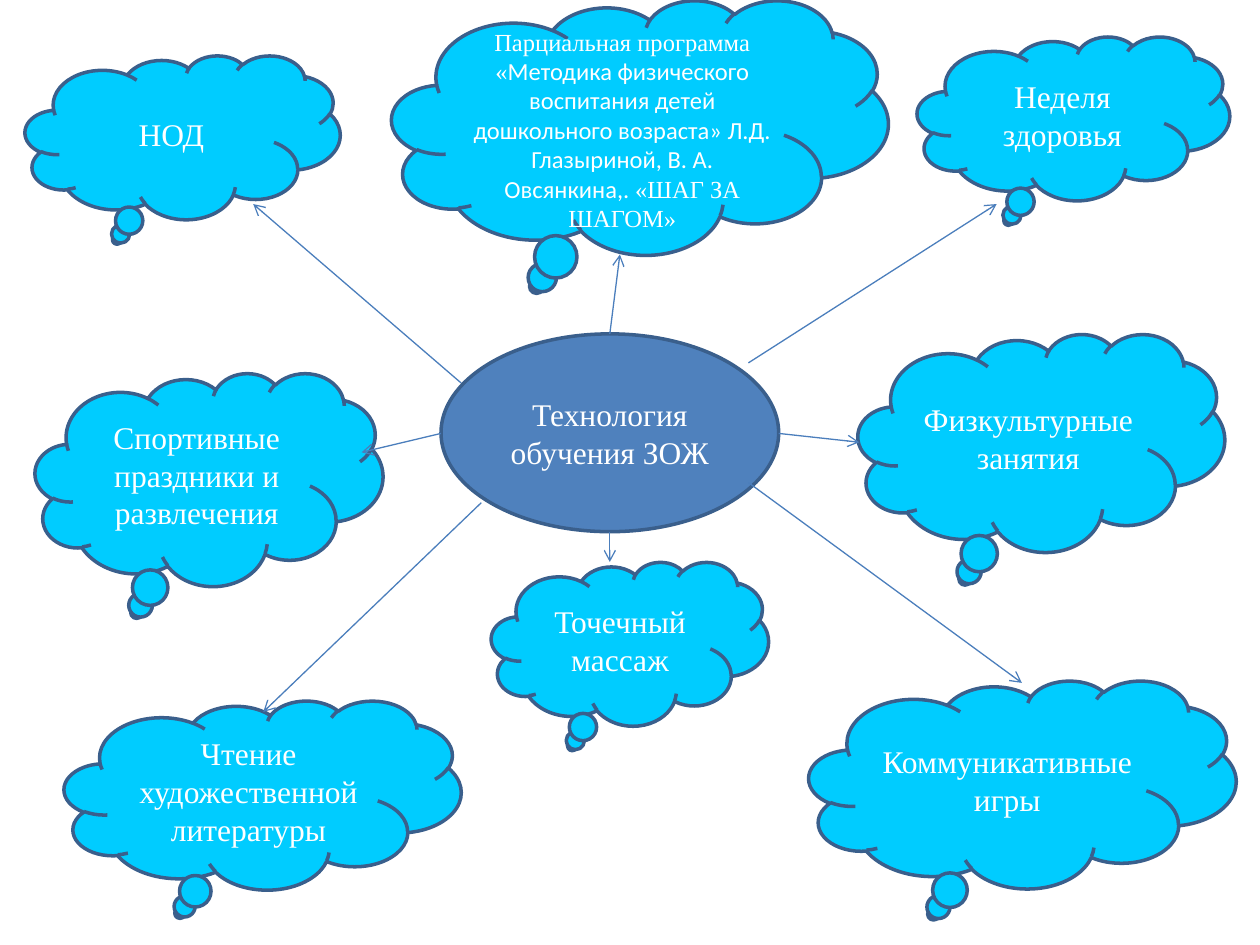
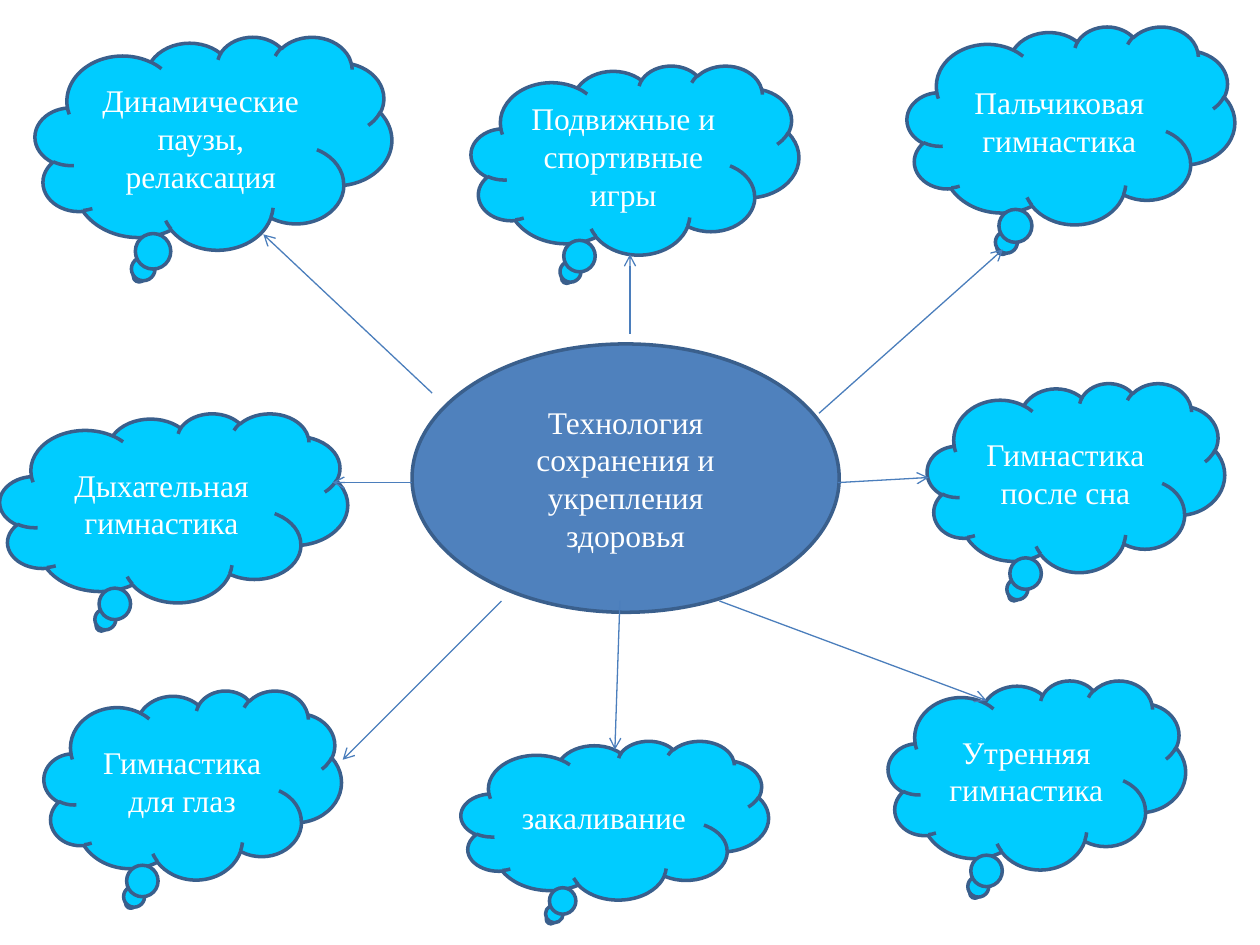
from lxml.etree import SubElement
from pptx import Presentation
from pptx.dml.color import RGBColor
from pptx.enum.shapes import MSO_CONNECTOR, MSO_SHAPE
from pptx.enum.text import MSO_ANCHOR, PP_ALIGN
from pptx.oxml.ns import qn
from pptx.util import Inches, Pt

SERIF, SANS = "Times New Roman", "Calibri"
CLOUD_FILL = RGBColor(0x00, 0xCC, 0xFF)
TOPIC_FILL = RGBColor(0x4F, 0x81, 0xBD)
OUTLINE = RGBColor(0x3A, 0x5F, 0x8C)
ARROW = RGBColor(0x4B, 0x7E, 0xBC)
WHITE = RGBColor(0xFF, 0xFF, 0xFF)

PROGRAMME = [
    ("Парциальная программа «", SERIF),
    ("Методика физического воспитания детей дошкольного возраста» Л.Д. Глазыриной, "
     "В. А. Овсянкина,. ", SANS),
    ("«ШАГ ЗА ШАГОМ»", SERIF),
]

# Inches. Topic: text, box. Cloud: text, box (left, top, width, height), arrow start, arrow end.
MAPS = [
    {
        "topic": ("Технология обучения ЗОЖ", (3.5, 2.65, 2.68, 1.57)),
        "clouds": [
            (PROGRAMME, (3.11, 0, 3.94, 2.02), (4.84, 2.65), (4.92, 2.02)),
            ("Физкультурные занятия", (6.81, 2.65, 2.91, 1.73), (6.18, 3.44), (6.82, 3.51)),
            ("НОД", (0.2, 0.44, 2.5, 1.3), (3.66, 3.04), (2.01, 1.62)),
            ("Коммуникативные игры", (6.42, 5.4, 3.39, 1.65), (5.94, 3.83), (8.11, 5.42)),
            ("Чтение художественной литературы", (0.51, 5.56, 3.15, 1.5),
             (3.82, 3.99), (2.09, 5.65)),
            ("Точечный массаж", (3.9, 4.46, 2.2, 1.3), (4.84, 4.22), (4.84, 4.46)),
            ("Спортивные праздники и развлечения", (0.28, 2.96, 2.76, 1.69),
             (3.5, 3.44), (2.87, 3.59)),
            ("Неделя здоровья", (7.28, 0.29, 2.48, 1.3), (5.94, 2.88), (7.91, 1.62)),
        ],
    },
    {
        "topic": ("Технология сохранения и укрепления здоровья", (3.27, 2.73, 3.39, 2.13)),
        "clouds": [
            ("Динамические паузы, релаксация", (0.28, 0.29, 2.83, 1.69),
             (3.43, 3.12), (2.09, 1.86)),
            ("Подвижные и спортивные игры", (3.74, 0.52, 2.6, 1.5), (5, 2.65), (5, 2.02)),
            ("Пальчиковая гимнастика", (7.2, 0.21, 2.6, 1.57), (6.5, 3.28), (7.96, 1.98)),
            ("Гимнастика после сна", (7.36, 3.04, 2.36, 1.5), (6.65, 3.83), (7.37, 3.79)),
            ("Дыхательная гимнастика", (0, 3.28, 2.76, 1.5), (3.27, 3.83), (2.64, 3.83)),
            ("Утренняя гимнастика", (7.05, 5.4, 2.36, 1.5), (5.71, 4.77), (7.83, 5.56)),
            ("Гимнастика для глаз", (0.35, 5.48, 2.36, 1.5), (3.98, 4.77), (2.72, 6.03)),
            ("закаливание", (3.66, 5.88, 2.44, 1.26), (4.92, 4.77), (4.88, 5.95)),
        ],
    },
]


def add_bubble(page, preset, text, box, fill):
    """Add an outlined shape with centred text: a string, or (text, font) spans set smaller."""
    shape = page.shapes.add_shape(preset, *map(Inches, box))
    shape.shadow.inherit = False
    shape.fill.solid()
    shape.fill.fore_color.rgb = fill
    shape.line.color.rgb = OUTLINE
    shape.line.width = Pt(2)
    frame = shape.text_frame
    frame.word_wrap = True
    frame.vertical_anchor = MSO_ANCHOR.MIDDLE
    para = frame.paragraphs[0]
    para.alignment = PP_ALIGN.CENTER
    para.font.color.rgb = WHITE
    if isinstance(text, str):
        para.text = text
        para.font.name = SERIF
        para.font.size = Pt(18)
    else:
        frame.margin_top = Inches(0.18)
        para.font.size = Pt(14)
        for words, font in text:
            span = para.add_run()
            span.text = words
            span.font.name = font


def add_arrow(page, start, end):
    arrow = page.shapes.add_connector(MSO_CONNECTOR.STRAIGHT, *map(Inches, start + end))
    arrow.line.color.rgb = ARROW
    arrow.line.width = Pt(0.75)
    SubElement(arrow.line._get_or_add_ln(), qn("a:tailEnd"), type="arrow")
    SubElement(arrow._element.spPr, qn("a:effectLst"))


def add_map(deck, topic, clouds):
    page = deck.slides.add_slide(deck.slide_layouts[6])
    add_bubble(page, MSO_SHAPE.OVAL, *topic, TOPIC_FILL)
    for text, box, _, _ in clouds:
        add_bubble(page, MSO_SHAPE.CLOUD_CALLOUT, text, box, CLOUD_FILL)
    for _, _, start, end in clouds:
        add_arrow(page, start, end)


def main():
    deck = Presentation()
    deck.slide_width, deck.slide_height = Inches(10), Inches(7.5)
    for content in MAPS:
        add_map(deck, **content)
    deck.save("out.pptx")


if __name__ == "__main__":
    main()
